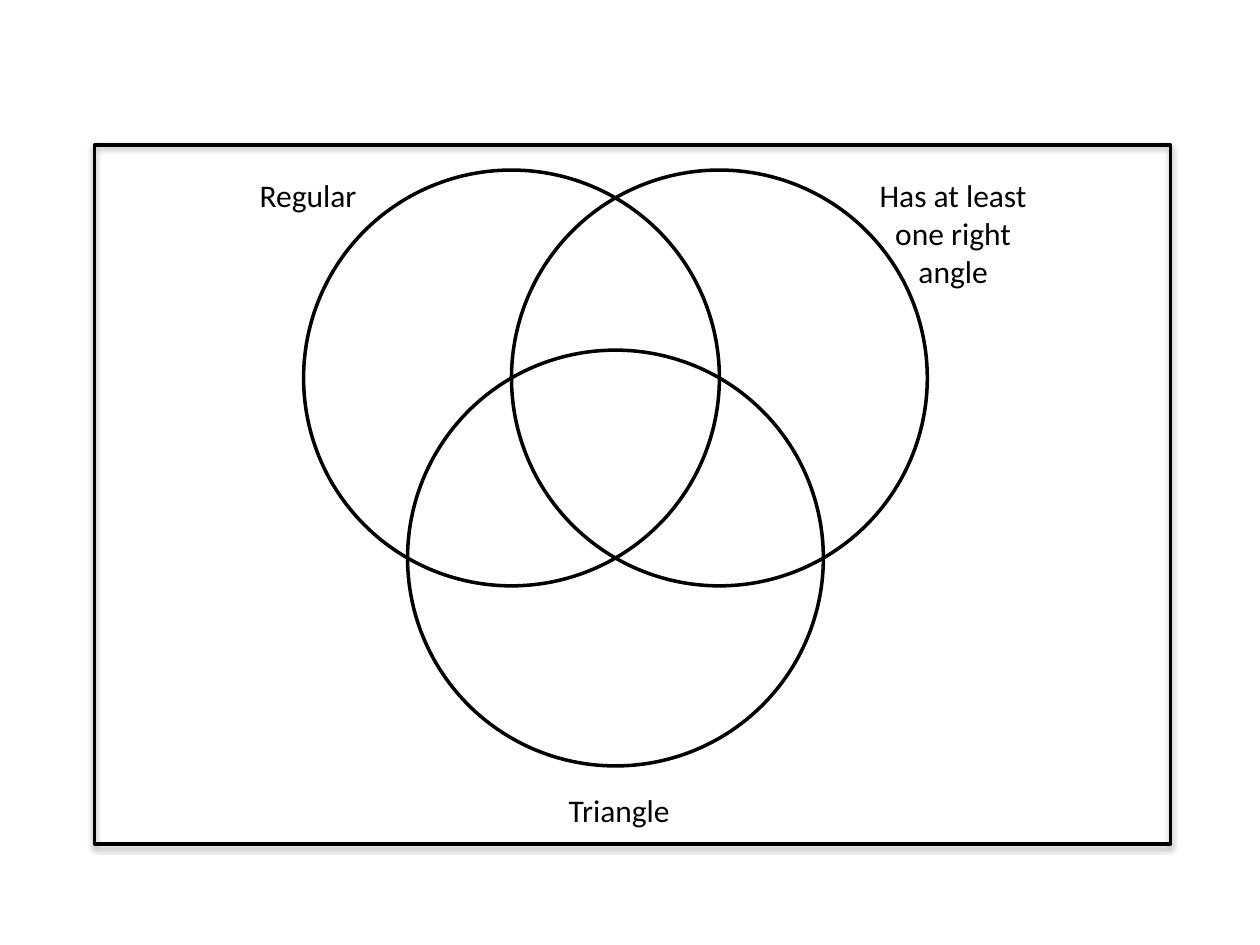
from math import sqrt

from lxml.etree import SubElement
from pptx import Presentation
from pptx.dml.color import RGBColor
from pptx.enum.shapes import MSO_SHAPE
from pptx.enum.text import MSO_AUTO_SIZE, PP_ALIGN
from pptx.oxml.ns import qn
from pptx.util import Inches, Pt

COLOURS = {"ink": "000000", "shadow": "000000"}
LABEL_FORMAT = {
    "name": "Calibri",
    "size": Pt(18),
}
LABEL_WIDTH = 1.57
RADIUS = 1.65


def add_outline(shapes, kind, left, top, width, height):
    """Add an unfilled shape with a black outline."""
    shape = shapes.add_shape(
        kind, Inches(left), Inches(top), Inches(width), Inches(height))
    shape.shadow.inherit = False
    shape.fill.background()
    shape.line.color.rgb = RGBColor.from_string(COLOURS["ink"])
    shape.line.width = Pt(2)
    return shape


def add_circles(slide, left, top):
    """Add three circles whose centres lie one radius apart."""
    group = slide.shapes.add_group_shape()
    offsets = [(0, 0), (RADIUS, 0), (RADIUS / 2, RADIUS * sqrt(3) / 2)]
    for across, down in offsets:
        add_outline(group.shapes, MSO_SHAPE.OVAL,
                    left + across, top + down, 2 * RADIUS, 2 * RADIUS)


def add_label(slide, text, left, top, height):
    """Add a centred, wrapping set label."""
    box = slide.shapes.add_textbox(
        Inches(left), Inches(top), Inches(LABEL_WIDTH), Inches(height))
    frame = box.text_frame
    frame.word_wrap = True
    frame.auto_size = MSO_AUTO_SIZE.SHAPE_TO_FIT_TEXT
    para = frame.paragraphs[0]
    para.alignment = PP_ALIGN.CENTER
    span = para.add_run()
    span.text = text
    for name, value in LABEL_FORMAT.items():
        setattr(span.font, name, value)
    span.font.color.rgb = RGBColor.from_string(COLOURS["ink"])


def add_soft_shadow(shape):
    """Give a shape a faint shadow that falls straight down."""
    effects = shape._element.spPr.find(qn("a:effectLst"))
    shadow = SubElement(
        effects, qn("a:outerShdw"), blurRad=str(Pt(3.1)), dist=str(Pt(1.8)),
        dir=str(90 * 60000), rotWithShape="0")
    colour = SubElement(shadow, qn("a:srgbClr"), val=COLOURS["shadow"])
    SubElement(colour, qn("a:alpha"), val="35000")


def main():
    deck = Presentation()
    deck.slide_width, deck.slide_height = Inches(10), Inches(7.5)
    slide = deck.slides.add_slide(deck.slide_layouts[6])

    # Venn diagram
    add_circles(slide, 2.41, 1.35)

    # Set labels
    add_label(slide, "Regular", 1.66, 1.35, 0.4)
    add_label(slide, "Has at least one right angle", 6.78, 1.35, 1.01)
    add_label(slide, "Triangle", 4.13, 6.23, 0.4)

    # Frame of the universal set
    frame = add_outline(slide.shapes, MSO_SHAPE.RECTANGLE,
                        0.75, 1.15, 8.54, 5.55)
    add_soft_shadow(frame)

    deck.save("out.pptx")


if __name__ == "__main__":
    main()
